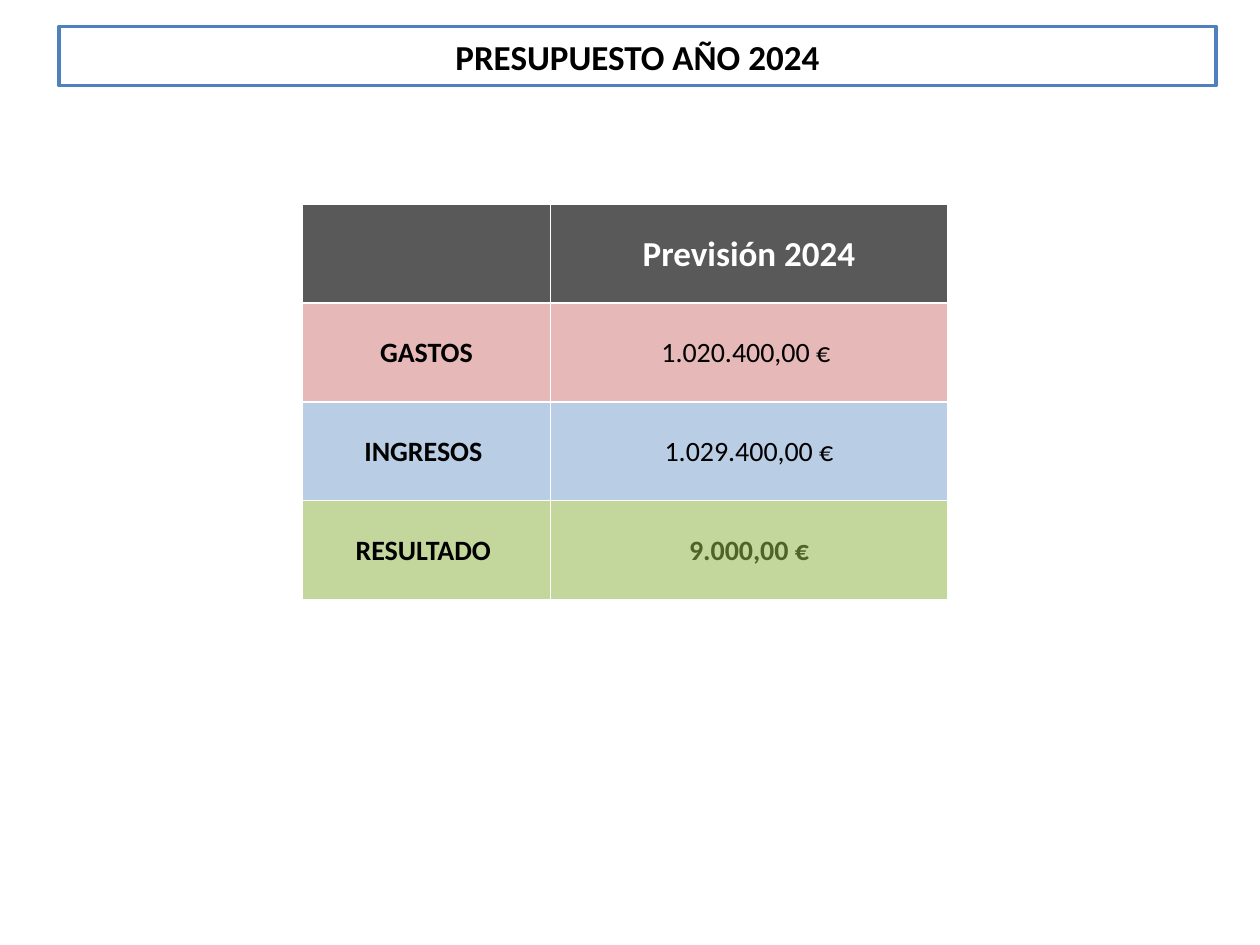
"""Builds the 2024 budget slide: a framed title above a table of totals."""
from dataclasses import dataclass

from pptx import Presentation
from pptx.dml.color import RGBColor
from pptx.enum.text import MSO_ANCHOR as Anchor, MSO_AUTO_SIZE as AutoSize, PP_ALIGN as Align
from pptx.util import Inches, Pt

BLACK = RGBColor(0x00, 0x00, 0x00)
WHITE = RGBColor(0xFF, 0xFF, 0xFF)
FRAME_BLUE = RGBColor(0x4F, 0x81, 0xBD)
HEADER_GREY = RGBColor(0x59, 0x59, 0x59)
EXPENSE_RED = RGBColor(0xE6, 0xB9, 0xB8)
INCOME_BLUE = RGBColor(0xB9, 0xCD, 0xE5)
RESULT_GREEN = RGBColor(0xC3, 0xD6, 0x9B)
DARK_GREEN = RGBColor(0x4F, 0x62, 0x28)

FONT = "Calibri"
COLUMN_WIDTHS = (1.97, 3.15)
ROW_HEIGHT = 0.785


@dataclass(frozen=True)
class BudgetRow:
    label: str
    amount: str
    fill: RGBColor
    amount_color: RGBColor = BLACK
    amount_bold: bool = False
    size: int = 16


BUDGET = (
    BudgetRow("", "Previsión 2024", HEADER_GREY, WHITE, True, 20),
    BudgetRow("GASTOS", "1.020.400,00 € ", EXPENSE_RED),
    BudgetRow("INGRESOS ", "1.029.400,00 €", INCOME_BLUE),
    BudgetRow("RESULTADO ", "9.000,00 €", RESULT_GREEN, DARK_GREEN, True),
)


def write(frame, text: str, size: int, color: RGBColor, bold: bool) -> None:
    frame.text = text
    paragraph = frame.paragraphs[0]
    paragraph.alignment = Align.CENTER
    for run in paragraph.runs:
        run.font.name = FONT
        run.font.size = Pt(size)
        run.font.bold = bold
        run.font.color.rgb = color


def add_title(slide, text: str) -> None:
    title = slide.shapes.title
    title.left, title.top = Inches(0.47), Inches(0.21)
    title.width, title.height = Inches(9.18), Inches(0.47)
    title.fill.solid()
    title.fill.fore_color.rgb = WHITE
    title.line.color.rgb = FRAME_BLUE
    title.line.width = Pt(2)
    title.text_frame.auto_size = AutoSize.NONE
    title.text_frame.vertical_anchor = Anchor.MIDDLE
    write(title.text_frame, text, 20, BLACK, True)


def fill_cell(cell, text: str, row: BudgetRow, color: RGBColor, bold: bool) -> None:
    cell.fill.solid()
    cell.fill.fore_color.rgb = row.fill
    cell.vertical_anchor = Anchor.MIDDLE
    cell.margin_left = cell.margin_right = cell.margin_top = Inches(0.01)
    cell.margin_bottom = 0
    write(cell.text_frame, text, row.size, color, bold)


def add_budget(slide, rows: tuple[BudgetRow, ...]) -> None:
    table = slide.shapes.add_table(
        len(rows), len(COLUMN_WIDTHS), Inches(2.4), Inches(1.62),
        Inches(sum(COLUMN_WIDTHS)), Inches(ROW_HEIGHT * len(rows)),
    ).table
    table.first_row = table.horz_banding = False
    for column, width in zip(table.columns, COLUMN_WIDTHS):
        column.width = Inches(width)
    for index, row in enumerate(rows):
        fill_cell(table.cell(index, 0), row.label, row, BLACK, True)
        fill_cell(table.cell(index, 1), row.amount, row, row.amount_color, row.amount_bold)


def main() -> None:
    deck = Presentation()
    deck.slide_width, deck.slide_height = Inches(10), Inches(7.5)
    slide = deck.slides.add_slide(deck.slide_layouts.get_by_name("Title Only"))
    add_title(slide, "PRESUPUESTO AÑO 2024")
    add_budget(slide, BUDGET)
    deck.save("out.pptx")


if __name__ == "__main__":
    main()
